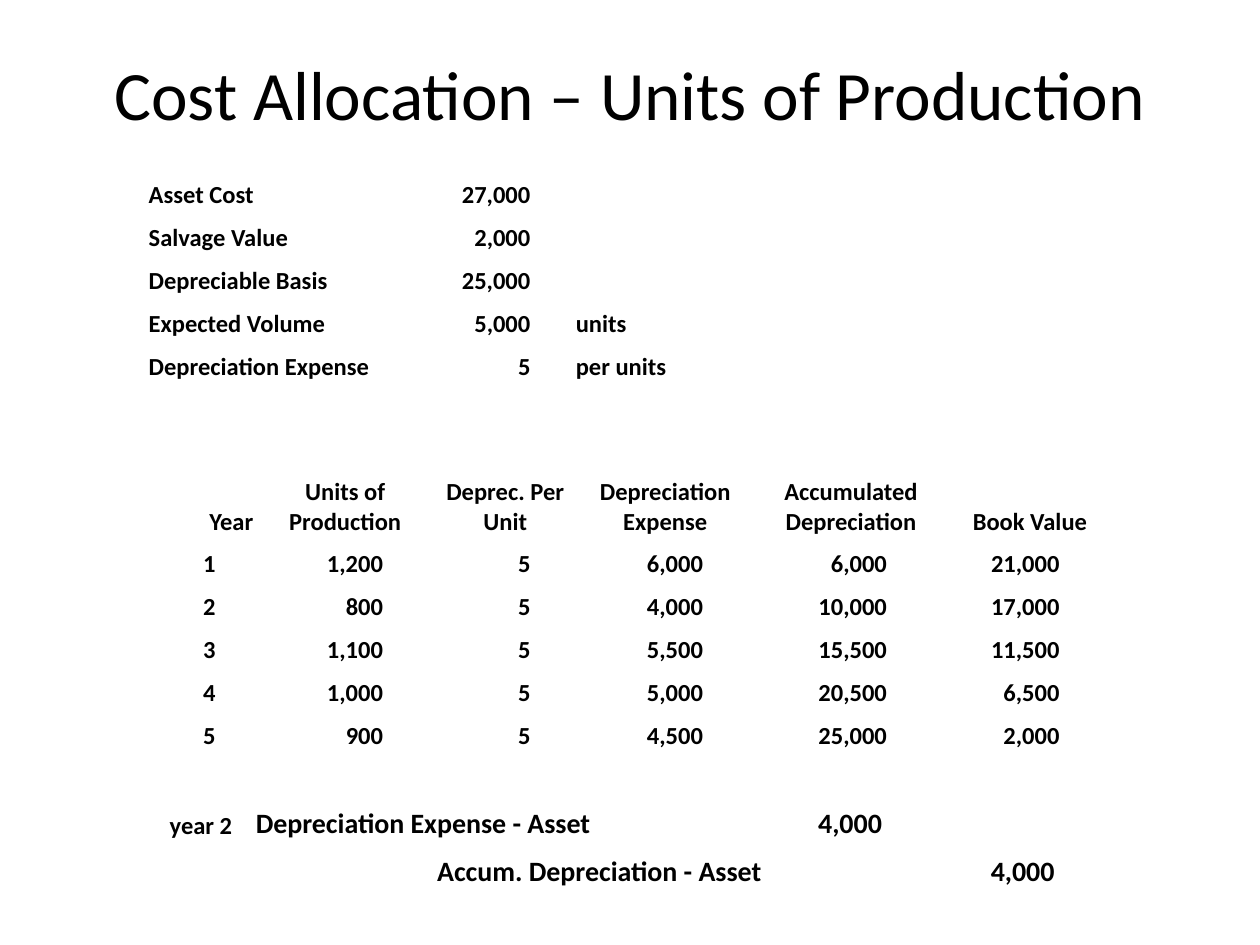
from dataclasses import dataclass

from pptx import Presentation
from pptx.dml.color import RGBColor
from pptx.enum.text import MSO_ANCHOR, MSO_AUTO_SIZE, PP_ALIGN as Align
from pptx.util import Inches, Pt

FONT = "Calibri"
BLACK = "000000"
COLUMN_WIDTHS = [0.85, 1.44, 1.1, 1.44, 1.51, 1.33]
ROW_HEIGHTS = [0.34] * 6 + [0.89] + [0.34] * 6 + [0.38] * 2
NUMBER_INSETS = [0.31, 0.42, 0.35, 0.42, 0.47, 0.43]
HEADING_ROW = 6
ENTRY_ROW = 13

ASSET_FACTS = [
    ("Asset Cost", "27,000", ""),
    ("Salvage Value", "2,000", ""),
    ("Depreciable Basis", "25,000", ""),
    ("Expected Volume", "5,000", "units"),
    ("Depreciation Expense", "5", "per units"),
]
HEADINGS = ["Year", "Units of Production", "Deprec. Per Unit",
            "Depreciation Expense", "Accumulated Depreciation", "Book Value"]
SCHEDULE = [
    ("1", "1,200", "5", "6,000", "6,000", "21,000"),
    ("2", "800", "5", "4,000", "10,000", "17,000"),
    ("3", "1,100", "5", "5,500", "15,500", "11,500"),
    ("4", "1,000", "5", "5,000", "20,500", "6,500"),
    ("5", "900", "5", "4,500", "25,000", "2,000"),
]


@dataclass
class Entry:
    row: int
    column: int
    text: str
    align: Align = Align.LEFT
    right_inset: float = 0.01
    span: int = 1
    size: float = 14


def add_span(para, text: str, size: float, bold: bool = False) -> None:
    span = para.add_run()
    span.text = text
    span.font.name = FONT
    span.font.size = Pt(size)
    span.font.bold = bold
    span.font.color.rgb = RGBColor.from_string(BLACK)


def add_title(page, text: str) -> None:
    title = page.shapes.title
    title.left, title.top = Inches(0.5), Inches(0.3)
    title.width, title.height = Inches(9), Inches(0.87)
    frame = title.text_frame
    frame.auto_size = MSO_AUTO_SIZE.NONE
    frame.vertical_anchor = MSO_ANCHOR.MIDDLE
    frame.paragraphs[0].alignment = Align.CENTER
    add_span(frame.paragraphs[0], text, 39.6)


def add_plain_table(page):
    """Add the grid without fills, banding or a styled header."""
    table = page.shapes.add_table(
        len(ROW_HEIGHTS), len(COLUMN_WIDTHS),
        Inches(1.17), Inches(1.33),
        Inches(sum(COLUMN_WIDTHS)), Inches(sum(ROW_HEIGHTS))).table
    table.first_row = table.horz_banding = False
    for column, width in zip(table.columns, COLUMN_WIDTHS):
        column.width = Inches(width)
    for row, height in zip(table.rows, ROW_HEIGHTS):
        row.height = Inches(height)
    for cell in table.iter_cells():
        cell.fill.background()
        cell.vertical_anchor = MSO_ANCHOR.BOTTOM
        cell.margin_left = cell.margin_right = cell.margin_top = Inches(0.01)
        cell.margin_bottom = 0
    return table


def fill_cell(table, entry: Entry) -> None:
    cell = table.cell(entry.row, entry.column)
    if entry.span > 1:
        cell.merge(table.cell(entry.row, entry.column + entry.span - 1))
    cell.margin_right = Inches(entry.right_inset)
    para = cell.text_frame.paragraphs[0]
    para.alignment = entry.align
    add_span(para, entry.text, entry.size, bold=True)


def number(row: int, column: int, text: str, size: float = 14) -> Entry:
    inset = NUMBER_INSETS[column] + (0.04 if size > 14 else 0)
    return Entry(row, column, text, Align.RIGHT, inset, size=size)


def table_entries() -> list[Entry]:
    entries = []
    for row, (label, amount, unit) in enumerate(ASSET_FACTS):
        entries += [Entry(row, 0, label, span=2), number(row, 2, amount)]
        if unit:
            entries.append(Entry(row, 3, unit))
    for column, heading in enumerate(HEADINGS):
        align = Align.CENTER if column else Align.RIGHT
        entries.append(Entry(HEADING_ROW, column, heading, align))
    for row, amounts in enumerate(SCHEDULE, HEADING_ROW + 1):
        entries += [number(row, column, amount)
                    for column, amount in enumerate(amounts)]
    entries += [
        Entry(ENTRY_ROW, 0, "year 2", Align.CENTER),
        Entry(ENTRY_ROW, 1, "Depreciation Expense - Asset", span=3, size=16),
        number(ENTRY_ROW, 4, "4,000", 16),
        Entry(ENTRY_ROW + 1, 2, "Accum. Depreciation - Asset", span=3, size=16),
        number(ENTRY_ROW + 1, 5, "4,000", 16),
    ]
    return entries


def main() -> None:
    deck = Presentation()
    deck.slide_width, deck.slide_height = Inches(10), Inches(7.5)
    page = deck.slides.add_slide(deck.slide_layouts[5])
    add_title(page, "Cost Allocation – Units of Production")
    table = add_plain_table(page)
    for entry in table_entries():
        fill_cell(table, entry)
    deck.save("out.pptx")


if __name__ == "__main__":
    main()
